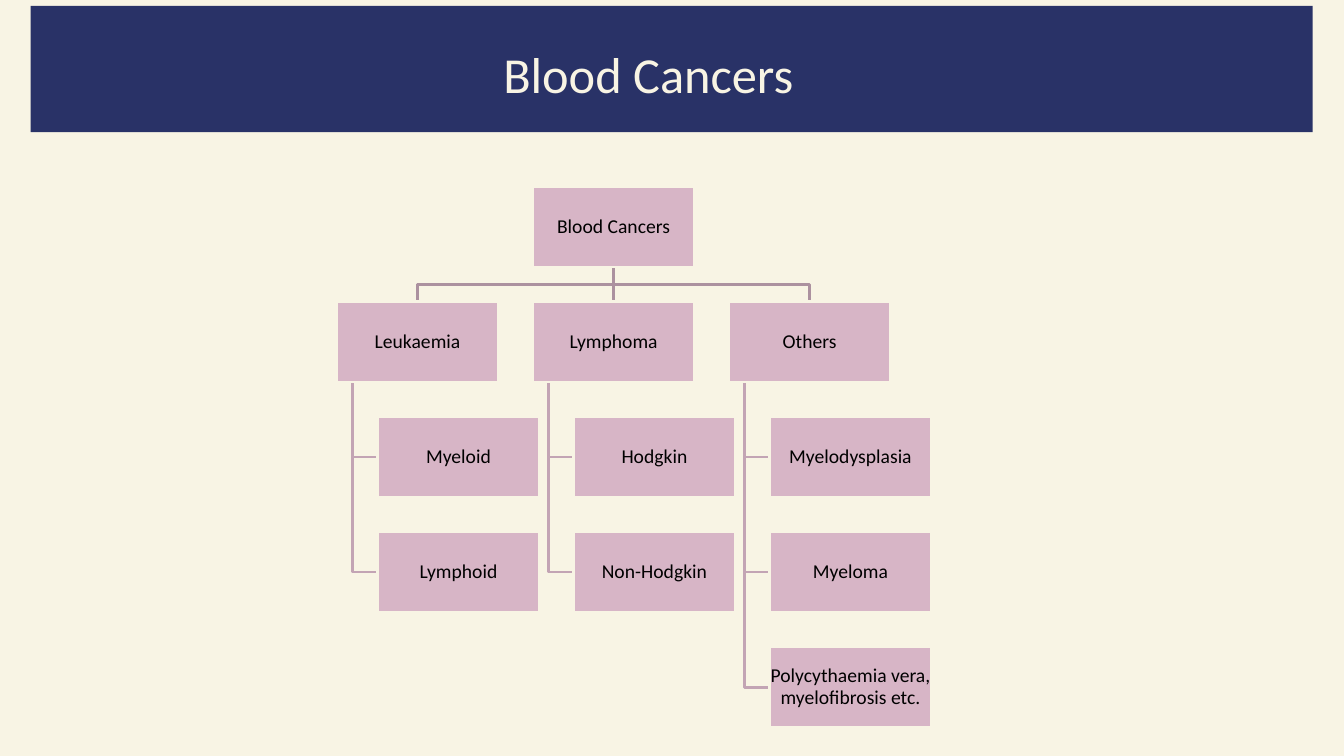
from dataclasses import dataclass

from lxml.etree import SubElement
from pptx import Presentation
from pptx.dml.color import RGBColor as Color
from pptx.enum.shapes import MSO_CONNECTOR as Connector, MSO_SHAPE as Preset
from pptx.enum.text import MSO_ANCHOR as Anchor, PP_ALIGN as Align
from pptx.oxml.ns import qn
from pptx.util import Cm, Pt


@dataclass(frozen=True)
class Theme:
    cream: Color = Color.from_string("F8F4E4")
    navy: Color = Color.from_string("293267")
    pink: Color = Color.from_string("D7B5C6")
    trunk: Color = Color.from_string("AC919F")
    branch: Color = Color.from_string("C3A4B4")
    black: Color = Color.from_string("000000")
    font: str = "Calibri"
    title_size: Pt = Pt(36)
    box_size: Pt = Pt(14)
    line_width: Pt = Pt(2)


theme = Theme()
BOX_WIDTH, BOX_HEIGHT = 4.09, 2.03
COLUMN_STEP, LEVEL_STEP = 4.94, 2.9
CHART_LEFT, CHART_TOP = 8.48, 4.7
CHILD_INDENT, SPINE_INDENT = 1.03, 0.4

families = {
    "Leukaemia": ["Myeloid", "Lymphoid"],
    "Lymphoma": ["Hodgkin", "Non-Hodgkin"],
    "Others": ["Myelodysplasia", "Myeloma", "Polycythaemia vera, myelofibrosis etc."],
}

presentation = Presentation()
presentation.slide_width, presentation.slide_height = Cm(33.87), Cm(19.05)
slide = presentation.slides.add_slide(presentation.slide_layouts[6])
slide.background.fill.solid()
slide.background.fill.fore_color.rgb = theme.cream


def write_text(shape, text, size, color, frame_format):
    for name, value in frame_format.items():
        setattr(shape.text_frame, name, value)
    paragraph = shape.text_frame.paragraphs[0]
    paragraph.alignment = Align.CENTER
    run = paragraph.add_run()
    run.text = text
    run.font.color.rgb = color
    for name, value in {"name": theme.font, "size": size}.items():
        setattr(run.font, name, value)
    return paragraph


def add_bent_line(points, color):
    corners = [(Cm(x), Cm(y)) for x, y in points]
    builder = slide.shapes.build_freeform(*corners[0], scale=1.0)
    builder.add_line_segments(corners[1:], close=False)
    shape = builder.convert_to_shape()
    shape.shadow.inherit = False
    shape.fill.background()
    shape.line.color.rgb = color
    shape.line.width = theme.line_width


banner = slide.shapes.add_shape(Preset.RECTANGLE, Cm(0.77), Cm(0.15), Cm(32.31), Cm(3.18))
banner.shadow.inherit = False
banner.fill.solid()
banner.fill.fore_color.rgb = theme.navy
banner.line.fill.background()

root_left = CHART_LEFT + COLUMN_STEP
root_middle = root_left + BOX_WIDTH / 2
root_bottom = CHART_TOP + BOX_HEIGHT
family_top = CHART_TOP + LEVEL_STEP
fork_height = (root_bottom + family_top) / 2
boxes = [("Blood Cancers", root_left, CHART_TOP)]

for column, (family, members) in enumerate(families.items()):
    left = CHART_LEFT + column * COLUMN_STEP
    middle = left + BOX_WIDTH / 2
    spine = left + SPINE_INDENT
    boxes.append((family, left, family_top))
    if column != 1:
        add_bent_line([(root_middle, root_bottom), (root_middle, fork_height),
                       (middle, fork_height), (middle, family_top)], theme.trunk)
    for level, member in enumerate(members, start=1):
        top = family_top + level * LEVEL_STEP
        member_middle = top + BOX_HEIGHT / 2
        member_left = left + CHILD_INDENT
        boxes.append((member, member_left, top))
        add_bent_line([(spine, family_top + BOX_HEIGHT), (spine, member_middle),
                       (member_left, member_middle)], theme.branch)

trunk = slide.shapes.add_connector(Connector.STRAIGHT, Cm(root_middle), Cm(root_bottom),
                                   Cm(root_middle), Cm(family_top))
trunk.line.color.rgb = theme.trunk
trunk.line.width = theme.line_width
SubElement(trunk._element.spPr, qn("a:effectLst"))

box_format = {"word_wrap": True, "vertical_anchor": Anchor.MIDDLE}
box_format.update({f"margin_{side}": Cm(0.02) for side in ("left", "right", "top", "bottom")})
box_shapes = {}
for label, left, top in boxes:
    box = slide.shapes.add_shape(Preset.RECTANGLE, Cm(left), Cm(top), Cm(BOX_WIDTH), Cm(BOX_HEIGHT))
    box.shadow.inherit = False
    box.fill.solid()
    box.fill.fore_color.rgb = theme.pink
    box.line.color.rgb = theme.cream
    box.line.width = theme.line_width
    paragraph = write_text(box, label, theme.box_size, theme.black, box_format)
    paragraph.line_spacing = 0.9
    box_shapes[label] = box

trunk.begin_connect(box_shapes["Blood Cancers"], 2)
trunk.end_connect(box_shapes["Lymphoma"], 0)

title = slide.shapes.add_textbox(Cm(7.72), Cm(0.97), Cm(17.53), Cm(1.8))
write_text(title, "Blood Cancers ", theme.title_size, theme.cream, {"word_wrap": True})

presentation.save("out.pptx")
